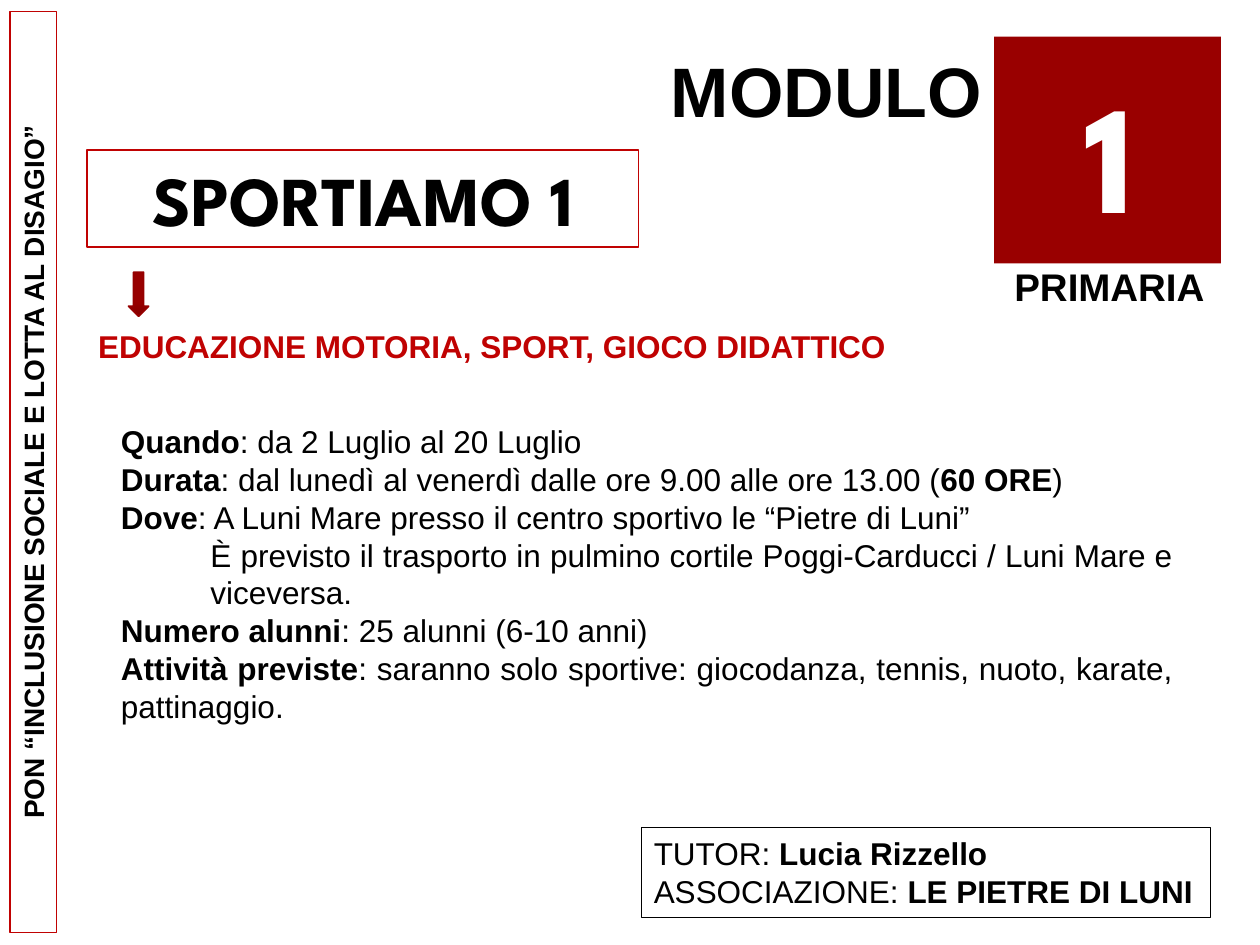
"""Build the module 1 slide of a primary school summer sports programme."""
from dataclasses import dataclass

from pptx import Presentation
from pptx.dml.color import RGBColor
from pptx.enum.shapes import MSO_SHAPE
from pptx.enum.text import MSO_ANCHOR, MSO_AUTO_SIZE, PP_ALIGN
from pptx.oxml.ns import qn
from pptx.shapes.autoshape import Shape
from pptx.slide import Slide
from pptx.util import Inches, Pt

RECTANGLE, DOWN_ARROW = MSO_SHAPE.RECTANGLE, MSO_SHAPE.DOWN_ARROW
TOP, MIDDLE = MSO_ANCHOR.TOP, MSO_ANCHOR.MIDDLE
NO_AUTOFIT = MSO_AUTO_SIZE.NONE
LEFT, CENTER, RIGHT, JUSTIFY = PP_ALIGN.LEFT, PP_ALIGN.CENTER, PP_ALIGN.RIGHT, PP_ALIGN.JUSTIFY


@dataclass(frozen=True)
class Theme:
    """Fonts, colours and type sizes of the slide."""
    text_font: str = "Arial"
    display_font: str = "League Spartan"
    black: str = "000000"
    white: str = "FFFFFF"
    red: str = "C00202"
    dark_red: str = "990000"
    arrow_shade: str = "830000"
    arrow_edge: str = "960000"
    number: int = 88
    title: int = 40
    level: int = 22
    body: int = 18
    sidebar: int = 16


THEME = Theme()


@dataclass(frozen=True)
class Area:
    """A place on the slide, in inches."""
    left: float
    top: float
    width: float
    height: float

    def lengths(self) -> list[Inches]:
        """Return the place as slide lengths."""
        return [Inches(value) for value in (self.left, self.top, self.width, self.height)]


@dataclass(frozen=True)
class Style:
    """The look of a block of text."""
    size: int
    align: PP_ALIGN = LEFT
    color: str = THEME.black
    font: str = THEME.text_font
    bold: bool | None = True


@dataclass(frozen=True)
class Line:
    """A paragraph whose spans alternate between first weight and its opposite."""
    spans: tuple[str, ...]
    starts_bold: bool = True
    indent: float = 0


@dataclass(frozen=True)
class Label:
    """A single line of text in its own text box."""
    text: str
    area: Area
    style: Style


LABELS = (
    Label("MODULO", Area(5.09, 0.33, 2.8, 0.77), Style(THEME.title, RIGHT)),
    Label("1", Area(8.02, 0.42, 1.57, 1.58),
          Style(THEME.number, CENTER, THEME.white, THEME.display_font)),
    Label("PRIMARIA", Area(7.89, 2.04, 1.83, 0.47), Style(THEME.level, CENTER)),
    Label("EDUCAZIONE MOTORIA, SPORT, GIOCO DIDATTICO", Area(0.68, 2.55, 6.98, 0.4),
          Style(THEME.body, color=THEME.red)),
)
DETAILS = (
    Line(("Quando", ": da 2 Luglio al 20 Luglio")),
    Line(("Durata", ": dal lunedì al venerdì dalle ore 9.00 alle ore 13.00 (", "60 ORE", ")")),
    Line(("Dove", ": A Luni Mare presso il centro sportivo le “Pietre di Luni”")),
    Line(("È previsto il trasporto in pulmino cortile Poggi-Carducci / Luni Mare e viceversa.",),
         starts_bold=False, indent=0.71),
    Line(("Numero alunni", ": 25 alunni (6-10 anni)")),
    Line(("Attività previste",
          ": saranno solo sportive: giocodanza, tennis, nuoto, karate, pattinaggio.")),
)
CONTACTS = (
    Line(("TUTOR: ", "Lucia Rizzello"), starts_bold=False),
    Line(("ASSOCIAZIONE: ", "LE PIETRE DI LUNI"), starts_bold=False),
)


def rgb(color: str) -> RGBColor:
    """Return a colour from its hexadecimal name."""
    return RGBColor.from_string(color)


def place(box: Shape, area: Area) -> None:
    """Move and size a box."""
    box.left, box.top, box.width, box.height = area.lengths()


def outline(box: Shape, color: str, width: float) -> None:
    """Draw the edge of a box."""
    box.line.color.rgb = rgb(color)
    box.line.width = Pt(width)


def add_block(slide: Slide, area: Area, preset: MSO_SHAPE = RECTANGLE) -> Shape:
    """Add a preset shape without fill, edge or shadow."""
    block = slide.shapes.add_shape(preset, *area.lengths())
    block.shadow.inherit = False
    block.fill.background()
    block.line.fill.background()
    return block


def write(box: Shape, lines: tuple[Line, ...], style: Style, anchor: MSO_ANCHOR = TOP) -> None:
    """Fill a box with formatted paragraphs."""
    frame = box.text_frame
    frame.word_wrap = True
    frame.auto_size = NO_AUTOFIT
    frame.vertical_anchor = anchor
    for index, line in enumerate(lines):
        para = frame.add_paragraph() if index else frame.paragraphs[0]
        para.alignment = style.align
        para.space_before = Pt(0)
        para.font.name = style.font
        para.font.size = Pt(style.size)
        para.font.color.rgb = rgb(style.color)
        para.font.bold = style.bold
        properties = para._p.get_or_add_pPr()
        properties.set("marL", str(Inches(line.indent)))
        properties.set("indent", "0")
        properties.insert_element_before(
            properties.makeelement(qn("a:buNone"), {}), "a:tabLst", "a:defRPr", "a:extLst")
        for position, text in enumerate(line.spans):
            span = para.add_run()
            span.text = text
            if style.bold is None:
                span.font.bold = line.starts_bold == (position % 2 == 0)


def add_arrow(slide: Slide, area: Area) -> None:
    """Add the shaded arrow that leads from the title to the subject."""
    arrow = add_block(slide, area, DOWN_ARROW)
    arrow.fill.gradient()
    arrow.fill.gradient_angle = 90
    shades = ((0, THEME.arrow_shade), (0.35, THEME.dark_red))
    for stop, (position, color) in zip(arrow.fill.gradient_stops, shades):
        stop.position = position
        stop.color.rgb = rgb(color)
    outline(arrow, THEME.arrow_edge, 1)


def main() -> None:
    """Build and save the deck."""
    deck = Presentation()
    deck.slide_width, deck.slide_height = Inches(10), Inches(7.5)
    page = deck.slides.add_slide(deck.slide_layouts[1])

    badge = add_block(page, Area(7.89, 0.29, 1.8, 1.8))
    badge.fill.solid()
    badge.fill.fore_color.rgb = rgb(THEME.dark_red)

    sidebar = add_block(page, Area(-3.39, 3.56, 7.31, 0.37))
    sidebar.rotation = 270
    outline(sidebar, THEME.red, 1)
    write(sidebar, (Line(("PON “INCLUSIONE SOCIALE E LOTTA AL DISAGIO”",)),),
          Style(THEME.sidebar, CENTER))

    for label in LABELS:
        box = page.shapes.add_textbox(*label.area.lengths())
        write(box, (Line((label.text,)),), label.style)

    title = page.shapes.title
    place(title, Area(0.69, 1.19, 4.38, 0.77))
    outline(title, THEME.red, 0.75)
    write(title, (Line(("SPORTIAMO 1",)),),
          Style(THEME.title, CENTER, font=THEME.display_font), MIDDLE)

    add_arrow(page, Area(1.02, 2.16, 0.16, 0.35))

    details = page.placeholders[1]
    place(details, Area(0.86, 3.3, 8.55, 2.52))
    write(details, DETAILS, Style(THEME.body, JUSTIFY, bold=None))

    contacts = add_block(page, Area(5.09, 6.57, 4.52, 0.71))
    outline(contacts, THEME.black, 0.75)
    write(contacts, CONTACTS, Style(THEME.body, bold=None))

    deck.save("out.pptx")


if __name__ == "__main__":
    main()
